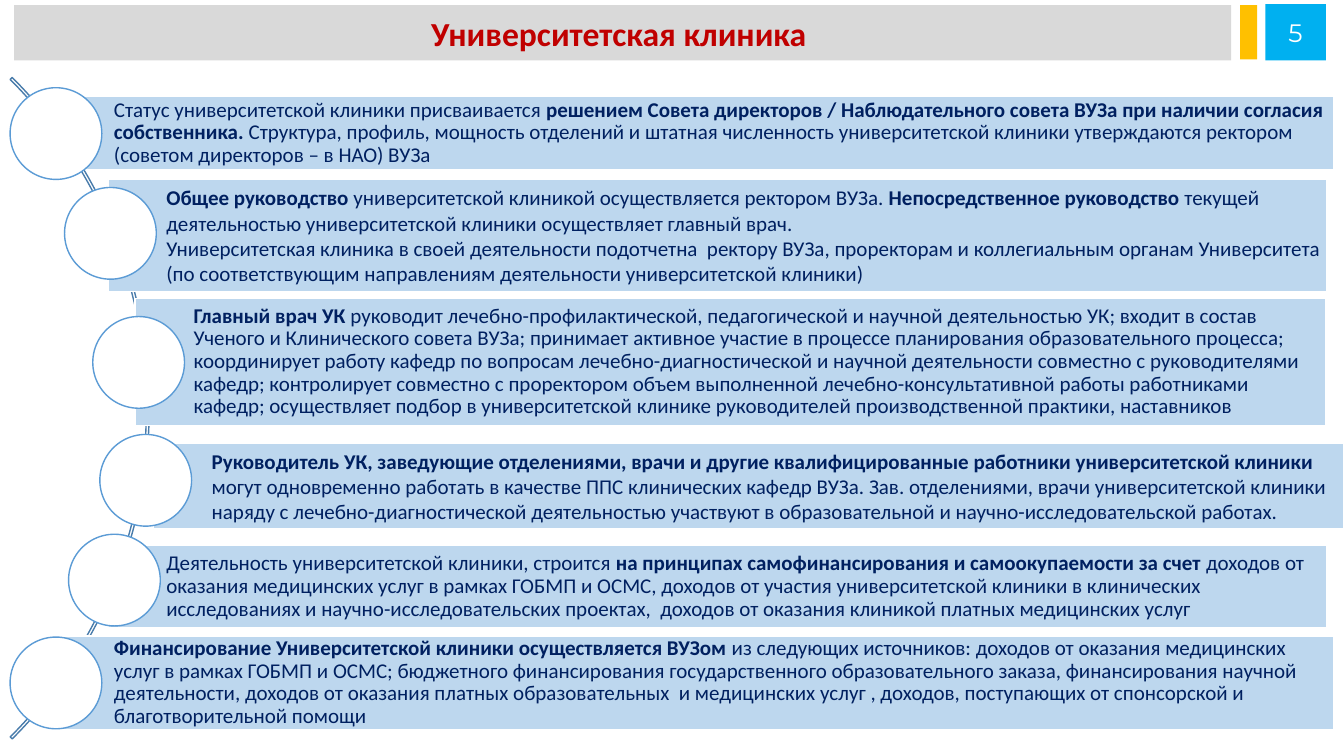
"""Build the university clinic slide: a header and six bands along an arc."""
from pptx import Presentation
from pptx.dml.color import RGBColor
from pptx.enum.shapes import MSO_SHAPE
from pptx.enum.text import MSO_ANCHOR, PP_ALIGN
from pptx.util import Inches, Pt

COLORS = {
    "grey": "D9D9D9", "amber": "FFC000", "cyan": "00B0F0", "band": "BDD7EE",
    "white": "FFFFFF", "ring": "5B9BD5", "arc": "497CAB", "red": "C00000",
    "navy": "002060",
}

TITLE = "Университетская клиника "
PAGE = "5"
HEADER = [
    ((0.14, 0.05, 12.07, 0.55), "grey", TITLE,
     {"size": Pt(24), "name": "Calibri", "bold": True}, "red"),
    ((12.3, 0.05, 0.17, 0.54), "amber", "", {}, "white"),
    ((12.55, 0.04, 0.6, 0.56), "cyan", PAGE,
     {"size": Pt(18), "name": "Montserrat"}, "white"),
]

ARC_BOX = (-7.8, -0.59, 9.28, 9.28)
ARC_ADJ = (189, 27, 0.003)
CIRCLE = 0.91
MARGINS = {
    "margin_left": Inches(0.58), "margin_right": Inches(0.04),
    "margin_top": Inches(0.04), "margin_bottom": Inches(0.04),
}

BANDS = [
    {"box": (0.55, 0.96, 12.68, 0.72), "circle": (0.1, 0.87), "spacing": 0.9, "text": [[
        ("Статус университетской клиники присваивается ", False),
        ("решением Совета директоров / Наблюдательного совета ВУЗа при наличии "
         "согласия собственника. ", True),
        ("Структура, профиль, мощность отделений и штатная численность "
         "университетской клиники утверждаются ректором (советом директоров – "
         "в НАО) ВУЗа", False)]]},
    {"box": (1.07, 1.78, 12.09, 1.11), "circle": (0.64, 1.86), "spacing": 1.0, "text": [[
        ("Общее руководство ", True),
        ("университетской клиникой осуществляется ректором ВУЗа. ", False),
        ("Непосредственное руководство ", True),
        ("текущей деятельностью университетской клиники осуществляет главный "
         "врач.", False)], [
        ("Университетская клиника в своей деятельности подотчетна  ректору ВУЗа, "
         "проректорам и коллегиальным органам Университета (по соответствующим "
         "направлениям деятельности университетской клиники)", False)]]},
    {"box": (1.34, 2.96, 11.81, 1.26), "circle": (0.92, 3.14), "spacing": 0.9, "text": [[
        ("Главный врач УК ", True),
        ("руководит лечебно-профилактической, педагогической и научной "
         "деятельностью УК; входит в состав Ученого и Клинического совета ВУЗа; "
         "принимает активное участие в процессе планирования образовательного "
         "процесса; координирует работу кафедр по вопросам лечебно-диагностической "
         "и научной деятельности совместно с руководителями кафедр; контролирует "
         "совместно с проректором объем выполненной лечебно-консультативной работы "
         "работниками кафедр; осуществляет подбор в университетской клинике "
         "руководителей производственной практики, наставников", False)]]},
    {"box": (1.52, 4.4, 11.81, 0.85), "circle": (0.99, 4.31), "spacing": 1.0, "text": [[
        ("Руководитель УК, заведующие отделениями, врачи и другие "
         "квалифицированные работники университетской клиники ", True),
        ("могут одновременно работать в качестве ППС клинических кафедр ВУЗа. "
         "Зав. отделениями, врачи университетской клиники наряду с "
         "лечебно-диагностической деятельностью участвуют в образовательной и "
         "научно-исследовательской работах.", False)]]},
    {"box": (1.07, 5.41, 12.09, 0.82), "circle": (0.68, 5.3), "spacing": 0.9, "text": [[
        ("Деятельность университетской клиники, строится ", False),
        ("на принципах самофинансирования и самоокупаемости за счет ", True),
        ("доходов от оказания медицинских услуг в рамках ГОБМП и ОСМС, доходов "
         "от участия университетской клиники в клинических исследованиях и "
         "научно-исследовательских проектах,  доходов от оказания клиникой "
         "платных медицинских услуг", False)]]},
    {"box": (0.55, 6.31, 12.68, 0.93), "circle": (0.1, 6.32), "spacing": 0.9, "text": [[
        ("Финансирование Университетской клиники осуществляется ВУЗом ", True),
        ("из следующих источников: доходов от оказания медицинских услуг в рамках "
         "ГОБМП и ОСМС; бюджетного финансирования государственного "
         "образовательного заказа, финансирования научной деятельности, доходов "
         "от оказания платных образовательных  и медицинских услуг , доходов, "
         "поступающих от спонсорской и благотворительной помощи", False)]]},
]


def rgb(name):
    return RGBColor.from_string(COLORS[name])


def add_shape(s, kind, box, fill=None, line=None):
    sp = s.shapes.add_shape(kind, *map(Inches, box))
    sp.shadow.inherit = False
    if fill:
        sp.fill.solid()
        sp.fill.fore_color.rgb = rgb(fill)
    else:
        sp.fill.background()
    if line:
        sp.line.color.rgb = rgb(line)
        sp.line.width = Pt(1)
    else:
        sp.line.fill.background()
    return sp


def add_run(p, text, font, color):
    r = p.add_run()
    r.text = text
    for key, value in font.items():
        setattr(r.font, key, value)
    r.font.color.rgb = rgb(color)


def add_header(s):
    for box, fill, text, font, color in HEADER:
        sp = add_shape(s, MSO_SHAPE.RECTANGLE, box, fill)
        if text:
            tf = sp.text_frame
            tf.vertical_anchor = MSO_ANCHOR.MIDDLE
            p = tf.paragraphs[0]
            p.alignment = PP_ALIGN.CENTER
            add_run(p, text, font, color)


def add_band(s, band):
    sp = add_shape(s, MSO_SHAPE.RECTANGLE, band["box"], "band", "white")
    tf = sp.text_frame
    tf.word_wrap = True
    tf.vertical_anchor = MSO_ANCHOR.MIDDLE
    for key, value in MARGINS.items():
        setattr(tf, key, value)
    for i, runs in enumerate(band["text"]):
        p = tf.add_paragraph() if i else tf.paragraphs[0]
        p.alignment = PP_ALIGN.LEFT
        p.line_spacing = band["spacing"]
        for text, bold in runs:
            font = {"size": Pt(15), "name": "Calibri", "bold": bold}
            add_run(p, text, font, "navy")
    add_shape(s, MSO_SHAPE.OVAL, (*band["circle"], CIRCLE, CIRCLE), "white", "ring")


def main():
    prs = Presentation()
    prs.slide_width, prs.slide_height = Inches(13.33), Inches(7.5)
    s = prs.slides.add_slide(prs.slide_layouts[6])
    add_header(s)
    arc = add_shape(s, MSO_SHAPE.BLOCK_ARC, ARC_BOX, line="arc")
    for i, value in enumerate(ARC_ADJ):
        arc.adjustments[i] = value
    for band in BANDS:
        add_band(s, band)
    prs.save("out.pptx")


if __name__ == "__main__":
    main()
